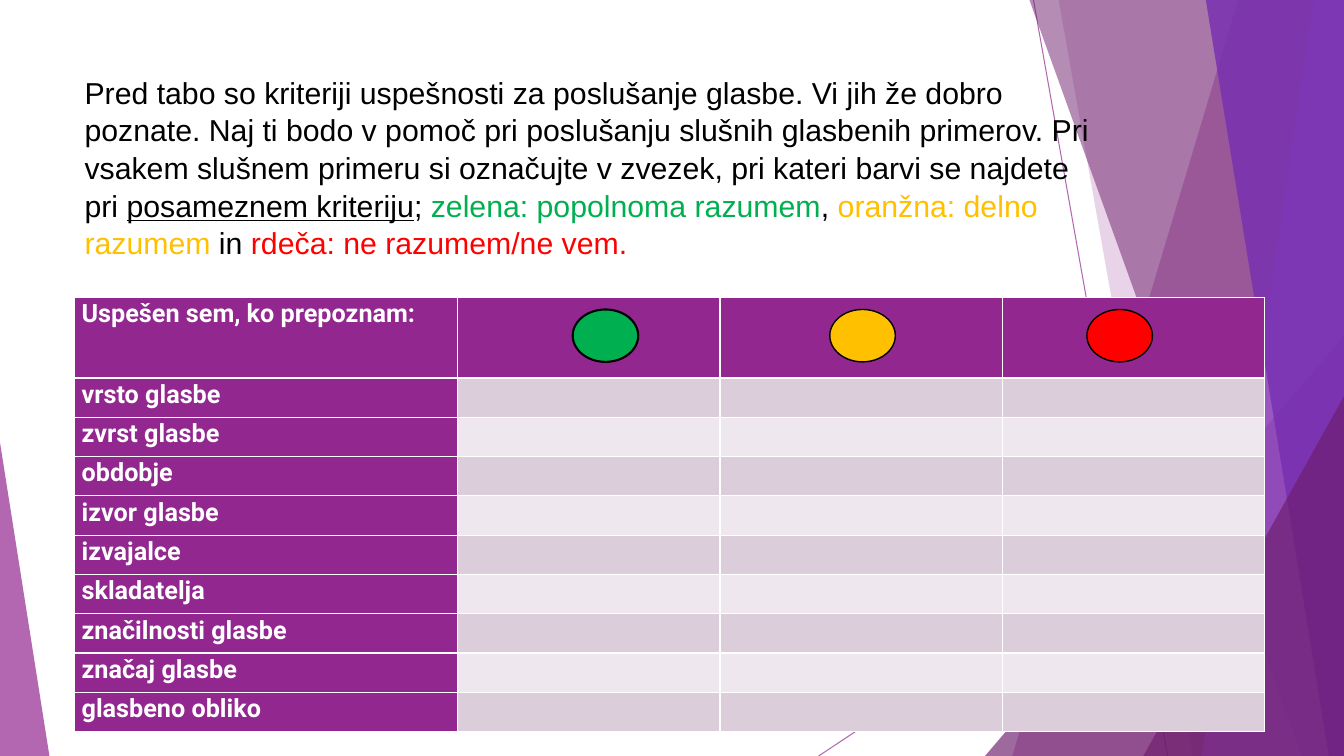
import pptx
import pptx.util
import pptx.dml.color
import pptx.enum.shapes
import pptx.enum.text
import lxml.etree

Inches = pptx.util.Inches
Pt = pptx.util.Pt
SHAPES = pptx.enum.shapes.MSO_SHAPE
WIDTH, HEIGHT = 13.33, 7.5
PURPLE, DARK_PURPLE = "92278F", "6D1D6B"
BLACK, WHITE = "000000", "FFFFFF"
GREEN, ORANGE, RED = "00B050", "FFC000", "FF0000"
BANDS = ["DCCDDB", "EEE8EE"]

INSTRUCTIONS = [
    ("Pred tabo so kriteriji uspešnosti za poslušanje glasbe. Vi jih že dobro poznate. "
     "Naj ti bodo v pomoč pri poslušanju slušnih glasbenih primerov. Pri vsakem slušnem "
     "primeru si označujte v zvezek, pri kateri barvi se najdete pri ", BLACK, False),
    ("posameznem kriteriju", BLACK, True),
    ("; ", BLACK, False),
    ("zelena: popolnoma razumem", GREEN, False),
    (", ", BLACK, False),
    ("oranžna: delno razumem ", ORANGE, False),
    ("in ", BLACK, False),
    ("rdeča: ne razumem/ne vem.", RED, False),
]
CRITERIA = ["Uspešen sem, ko prepoznam:", "vrsto glasbe", "zvrst glasbe", "obdobje",
            "izvor glasbe", "izvajalce", "skladatelja", "značilnosti glasbe",
            "značaj glasbe", "glasbeno obliko"]


def paint(color_format, color, opacity=100):
    color_format.rgb = pptx.dml.color.RGBColor.from_string(color)
    if opacity < 100:
        namespace = pptx.oxml.ns.qn("a:alpha")
        for element in color_format._xFill.iter(pptx.oxml.ns.qn("a:srgbClr")):
            lxml.etree.SubElement(element, namespace, val=str(opacity * 1000))


def fill_shape(shape, color, opacity=100):
    shape.shadow.inherit = False
    shape.fill.solid()
    paint(shape.fill.fore_color, color, opacity)
    shape.line.fill.background()


def add_ray(page, start, end):
    ray = page.shapes.add_connector(pptx.enum.shapes.MSO_CONNECTOR.STRAIGHT,
                                    *map(Inches, start + end))
    ray.line.width = Pt(0.75)
    ray.line.fill.solid()
    paint(ray.line.fill.fore_color, PURPLE, 70)
    lxml.etree.SubElement(ray._element.spPr, pptx.oxml.ns.qn("a:effectLst"))


def add_shard(page, top_left, bottom_left, color, opacity):
    builder = page.shapes.build_freeform(Inches(top_left), 0)
    corners = [(WIDTH, 0), (WIDTH, HEIGHT), (bottom_left, HEIGHT)]
    builder.add_line_segments([(Inches(x), Inches(y)) for x, y in corners])
    fill_shape(builder.convert_to_shape(), color, opacity)


def add_corner(page, left, top, width, apex, color, opacity):
    corner = page.shapes.add_shape(SHAPES.ISOSCELES_TRIANGLE, Inches(left), Inches(top),
                                   Inches(width), Inches(HEIGHT - top))
    corner.adjustments[0] = apex
    fill_shape(corner, color, opacity)


def add_backdrop(page):
    add_ray(page, (10.25, 0), (11.58, HEIGHT))
    add_ray(page, (WIDTH, 4.03), (8.12, HEIGHT))
    add_shard(page, 12.28, 10.04, PURPLE, 36)
    add_shard(page, 10.5, 11.83, PURPLE, 20)
    add_corner(page, 9.77, 3.33, 3.56, 1, DARK_PURPLE, 66)
    add_shard(page, 10.21, 12.91, DARK_PURPLE, 50)
    add_shard(page, 13.03, 11.92, "9B57D3", 70)
    add_shard(page, 11.96, 13.18, "762EB1", 80)
    add_corner(page, 11.34, 3.93, 1.99, 1, DARK_PURPLE, 66)
    add_corner(page, 0, 4.39, 0.49, 0, PURPLE, 70)


def style_span(span, size, font, color):
    span.font.size = Pt(size)
    span.font.name = font
    paint(span.font.color, color)


def add_instructions(page, left, top, width, height):
    box = page.shapes.add_textbox(*map(Inches, (left, top, width, height)))
    frame = box.text_frame
    frame.word_wrap = True
    frame.vertical_anchor = pptx.enum.text.MSO_ANCHOR.TOP
    para = frame.paragraphs[0]
    para.line_spacing = 1.04
    for text, color, underlined in INSTRUCTIONS:
        span = para.add_run()
        span.text = text
        style_span(span, 21.6, "Arial", color)
        if underlined:
            span.font.underline = True


def add_criteria_table(page, left, top):
    column_widths = [3.8, 2.6, 2.8, 2.6]
    row_heights = [0.8] + [0.39] * (len(CRITERIA) - 1)
    frame = page.shapes.add_table(len(row_heights), len(column_widths), Inches(left),
                                  Inches(top), Inches(sum(column_widths)),
                                  Inches(sum(row_heights)))
    table = frame.table
    table.first_col = True
    for column, width in zip(table.columns, column_widths):
        column.width = Inches(width)
    for index, (row, height) in enumerate(zip(table.rows, row_heights)):
        row.height = Inches(height)
        for position, cell in enumerate(row.cells):
            cell.margin_left = cell.margin_right = Inches(0.07)
            cell.margin_top = cell.margin_bottom = 0
            is_heading = index == 0 or position == 0
            cell.fill.solid()
            paint(cell.fill.fore_color, PURPLE if is_heading else BANDS[(index - 1) % 2])
        para = table.cell(index, 0).text_frame.paragraphs[0]
        para.line_spacing = 1.07
        span = para.add_run()
        span.text = CRITERIA[index]
        span.font.bold = True
        style_span(span, 18, "Roboto", WHITE)


def add_lights(page, left, top, step):
    for index, (color, weight) in enumerate([(GREEN, 1.5), (ORANGE, 1), (RED, 1)]):
        light = page.shapes.add_shape(SHAPES.OVAL, Inches(left + index * step), Inches(top),
                                      Inches(0.65), Inches(0.52))
        fill_shape(light, color)
        light.line.fill.solid()
        paint(light.line.fill.fore_color, BLACK)
        light.line.width = Pt(weight)


def main():
    deck = pptx.Presentation()
    deck.slide_width, deck.slide_height = Inches(WIDTH), Inches(HEIGHT)
    page = deck.slides.add_slide(deck.slide_layouts[6])
    add_backdrop(page)
    add_instructions(page, 0.74, 0.67, 10.22, 1.17)
    add_criteria_table(page, 0.74, 2.95)
    add_lights(page, 5.68, 3.07, 2.55)
    deck.save("out.pptx")


if __name__ == "__main__":
    main()
